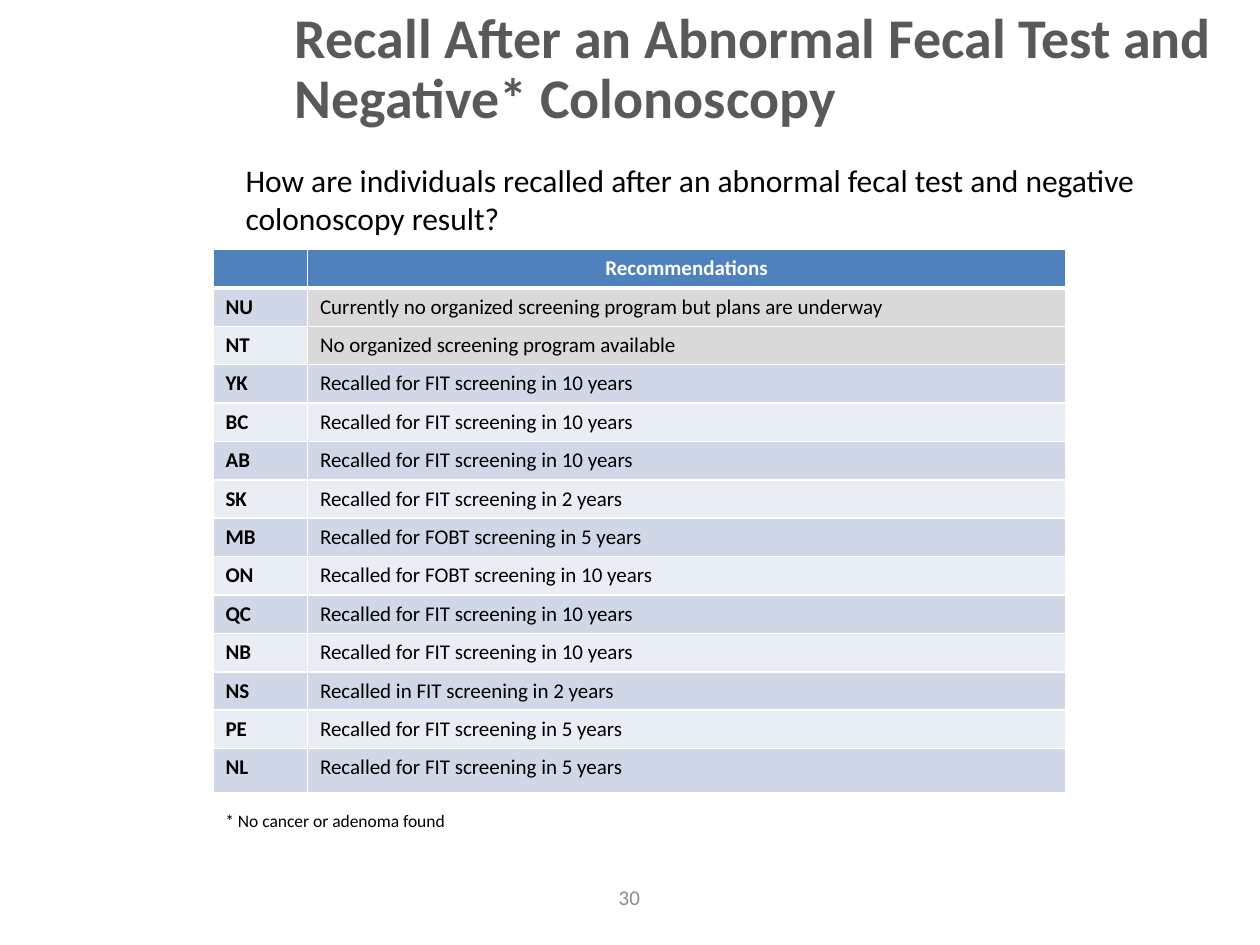
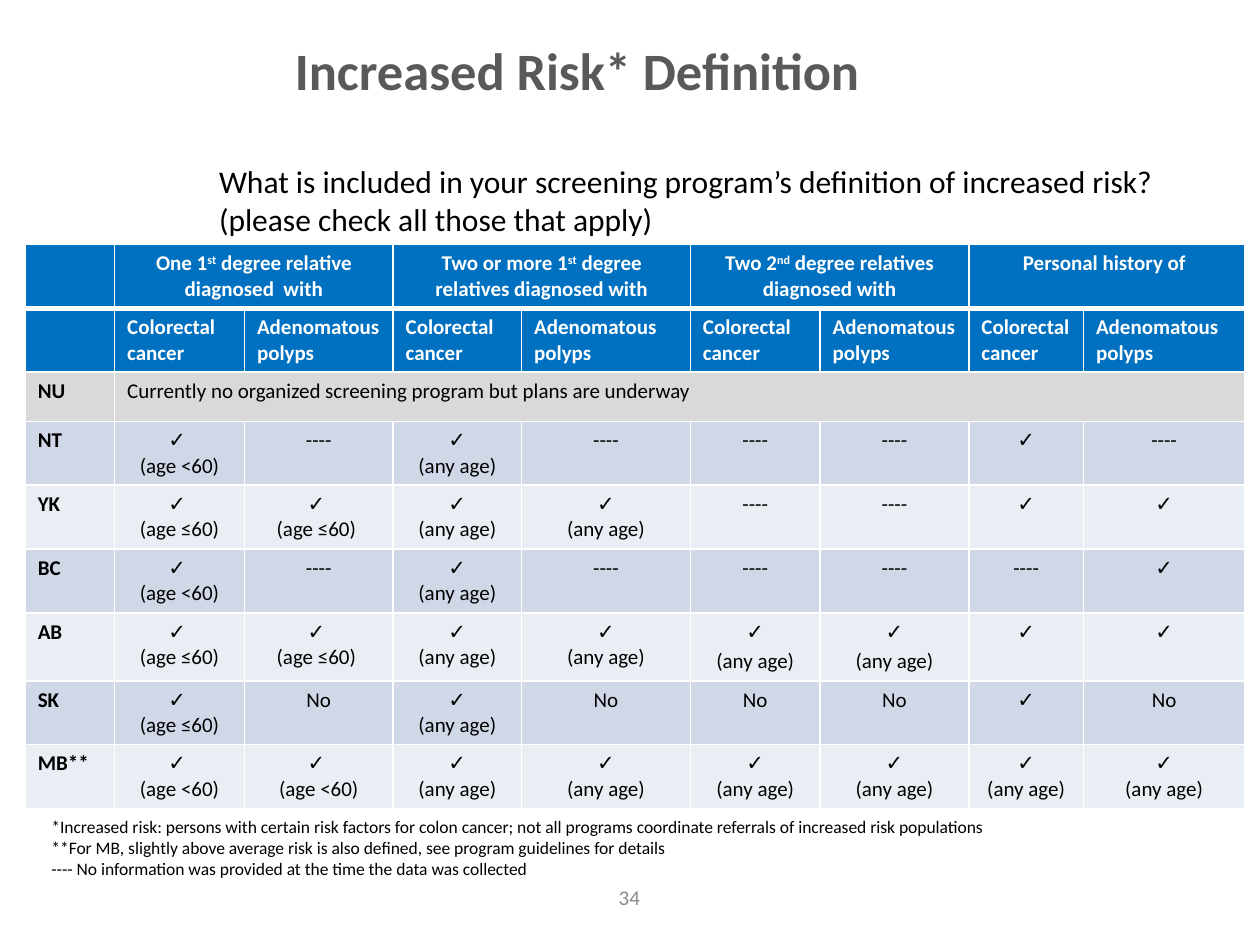
from dataclasses import dataclass
from typing import NamedTuple

from lxml.etree import SubElement
from pptx import Presentation
from pptx.dml.color import RGBColor
from pptx.enum.text import MSO_ANCHOR as Anchor, MSO_AUTO_SIZE as Fit, PP_ALIGN as Align
from pptx.oxml.ns import qn
from pptx.util import Pt

SCALE = 4572
FACE = "Calibri"
WHITE = RGBColor(0xFF, 0xFF, 0xFF)
BLACK = RGBColor(0x00, 0x00, 0x00)
SLATE = RGBColor(0x59, 0x59, 0x59)
DIM = RGBColor(0x8C, 0x8C, 0x8C)
STEEL = RGBColor(0x4F, 0x81, 0xBD)
BLUE = RGBColor(0x00, 0x70, 0xC0)
GRAY = RGBColor(0xD9, 0xD9, 0xD9)
BANDS = (RGBColor(0xE9, 0xED, 0xF4), RGBColor(0xD0, 0xD8, 0xE8))

TICK = "✓"
NONE = "----"
ANY = "✓\n(any age)"
UNDER = "✓ \n(age <60)"
UPTO = "✓ \n(age ≤60)"
UPTO_B = "✓ \n(age ≤60) "
PLANS = "Currently no organized screening program but plans are underway"
FIT_10 = "Recalled for FIT screening in 10 years"
FIT_5 = "Recalled for FIT screening in 5 years"


class Box(NamedTuple):
    x: int
    y: int
    w: int
    h: int


@dataclass
class Label:
    box: Box
    text: str
    size: int
    color: RGBColor = BLACK
    align: Align = Align.LEFT
    anchor: Anchor = Anchor.TOP


@dataclass
class Head:
    text: str
    size: int
    width: int
    line: int | None = None


@dataclass
class Grid:
    x: int
    y: int
    cols: list[int]
    rows: list[int]
    cells: list[list[str]]
    fill: RGBColor
    heads: int
    mid: set[int]
    gray: set[tuple[int, int]]
    spans: list[tuple[int, int, int]]
    loose: set[tuple[int, int]]


def px(n: int) -> int:
    return n * SCALE


def apply(item, form: dict) -> None:
    for key, value in form.items():
        setattr(item, key, value)


def style(run, size: int, color: RGBColor, bold: bool = False) -> None:
    apply(run.font, {"name": FACE, "size": Pt(size), "bold": bold})
    run.font.color.rgb = color


def draw_head(slide, head: Head) -> None:
    title = slide.shapes.title
    apply(title, {"left": px(448), "top": px(42), "width": px(head.width), "height": px(138)})
    frame = title.text_frame
    apply(frame, {"word_wrap": True, "auto_size": Fit.NONE, "vertical_anchor": Anchor.MIDDLE})
    para = frame.paragraphs[0]
    para.alignment = Align.LEFT
    if head.line:
        para.line_spacing = Pt(head.line)
    run = para.add_run()
    run.text = head.text
    style(run, head.size, SLATE, True)


def draw_label(slide, label: Label) -> None:
    frame = slide.shapes.add_textbox(*map(px, label.box)).text_frame
    apply(frame, {"word_wrap": True, "vertical_anchor": label.anchor})
    for i, line in enumerate(label.text.split("\n")):
        para = frame.add_paragraph() if i else frame.paragraphs[0]
        para.alignment = label.align
        run = para.add_run()
        run.text = line
        style(run, label.size, label.color)


def edge(cell, row: int) -> None:
    props = cell._tc.get_or_add_tcPr()
    for side in "LRTB":
        thick = (side, row) in {("B", 0), ("T", 1)}
        line = SubElement(props, qn(f"a:ln{side}"), w=str(Pt(3 if thick else 1)))
        SubElement(SubElement(line, qn("a:solidFill")), qn("a:srgbClr"), val=str(WHITE))


def write(cell, text: str, align: Align, color: RGBColor, bold: bool, gap: float) -> None:
    frame = cell.text_frame
    if not text:
        SubElement(frame.paragraphs[0]._p, qn("a:endParaRPr"), sz="1200")
        return
    for i, line in enumerate(text.split("\n")):
        para = frame.add_paragraph() if i else frame.paragraphs[0]
        para.alignment = align
        if i and gap:
            para.space_before = Pt(gap)
        for j, part in enumerate(line.split("^")):
            run = para.add_run()
            run.text = part
            style(run, 12, color, bold or TICK in part)
            if j % 2:
                run._r.get_or_add_rPr().set("baseline", "30000")


def draw_grid(slide, grid: Grid) -> None:
    area = Box(grid.x, grid.y, sum(grid.cols), sum(grid.rows))
    table = slide.shapes.add_table(len(grid.rows), len(grid.cols), *map(px, area)).table
    apply(table, {"first_row": False, "horz_banding": False})
    for col, width in zip(table.columns, grid.cols):
        col.width = px(width)
    for row, height in zip(table.rows, grid.rows):
        row.height = px(height)
    for r, line in enumerate(grid.cells):
        top = r < grid.heads
        for c, text in enumerate(line):
            cell = table.cell(r, c)
            edge(cell, r)
            cell.fill.solid()
            band = GRAY if (r, c) in grid.gray else BANDS[r % 2]
            cell.fill.fore_color.rgb = grid.fill if top else band
            align = Align.CENTER if c and r in grid.mid else Align.LEFT
            gap = 2.4 if (r, c) in grid.loose else 0
            write(cell, text, align, WHITE if top else BLACK, top or c == 0, gap)
    for r, first, last in grid.spans:
        table.cell(r, first).merge(table.cell(r, last))


def page(number: int) -> Label:
    return Label(Box(766, 1384, 466, 80), str(number), 12, DIM, Align.CENTER, Anchor.MIDDLE)


def draw_slide(deck, head: Head, grid: Grid, labels: list[Label]) -> None:
    slide = deck.slides.add_slide(deck.slide_layouts[5])
    draw_head(slide, head)
    draw_grid(slide, grid)
    for label in labels:
        draw_label(slide, label)


RECALL = Grid(
    x=338, y=396, cols=[150, 1204], rows=[61] * 13 + [70],
    cells=[
        ["", "Recommendations"],
        ["NU", PLANS],
        ["NT", "No organized screening program available"],
        ["YK", FIT_10],
        ["BC", FIT_10],
        ["AB", FIT_10],
        ["SK", "Recalled for FIT screening in 2 years"],
        ["MB", "Recalled for FOBT screening in 5 years"],
        ["ON", "Recalled for FOBT screening in 10 years"],
        ["QC", FIT_10],
        ["NB", FIT_10],
        ["NS", "Recalled in FIT screening in 2 years"],
        ["PE", FIT_5],
        ["NL", FIT_5],
    ],
    fill=STEEL, heads=1, mid={0}, gray={(1, 1), (2, 1)}, spans=[], loose=set(),
)

RISK = Grid(
    x=40, y=388, cols=[142, 206, 236, 204, 268, 206, 236, 182, 256], rows=[94] + [78] * 8,
    cells=[
        ["", "One 1^st^ degree relative diagnosed  with", "",
         "Two or more 1^st^ degree relatives diagnosed with", "",
         "Two 2^nd^ degree relatives diagnosed with", "", "Personal history of ", ""],
        [""] + ["Colorectal cancer", "Adenomatous polyps"] * 4,
        ["NU", PLANS] + [""] * 7,
        ["NT", UNDER, NONE, ANY, NONE, NONE, NONE, TICK, NONE],
        ["YK", UPTO, UPTO_B, ANY, ANY, NONE, NONE, TICK, TICK],
        ["BC", UNDER, NONE, ANY, NONE, NONE, NONE, NONE, TICK],
        ["AB", UPTO, UPTO_B, ANY, ANY, ANY, ANY, TICK, TICK],
        ["SK", UPTO, "No", ANY, "No", "No", "No", TICK, "No"],
        ["MB**", UNDER, UNDER] + [ANY] * 6,
    ],
    fill=BLUE, heads=2, mid={0, *range(3, 9)}, gray={(2, c) for c in range(9)},
    spans=[(0, c, c + 1) for c in range(1, 9, 2)] + [(2, 1, 8)],
    loose={(6, 5), (6, 6)},
)


def main() -> None:
    deck = Presentation()
    apply(deck, {"slide_width": px(2000), "slide_height": px(1500)})
    draw_slide(
        deck,
        Head("Recall After an Abnormal Fecal Test and Negative* Colonoscopy", 32, 1552, 34),
        RECALL,
        [
            Label(Box(338, 1276, 1482, 88), "* No cancer or adenoma found", 10),
            Label(Box(370, 246, 1558, 142), "How are individuals recalled after an abnormal "
                  "fecal test and negative colonoscopy result?", 18),
            page(30),
        ],
    )
    draw_slide(
        deck,
        Head("Increased Risk* Definition", 30, 1452),
        RISK,
        [
            Label(Box(328, 248, 1646, 142), "What is included in your screening program’s "
                  "definition of increased risk? (please check all those that apply)", 18),
            Label(Box(62, 1286, 1890, 122),
                  "*Increased risk: persons with certain risk factors for colon cancer; "
                  "not all programs coordinate referrals of increased risk populations\n"
                  "**For MB, slightly above average risk is also defined, "
                  "see program guidelines for details\n"
                  "---- No information was provided at the time the data was collected", 10),
            page(34),
        ],
    )
    deck.save("out.pptx")


if __name__ == "__main__":
    main()
